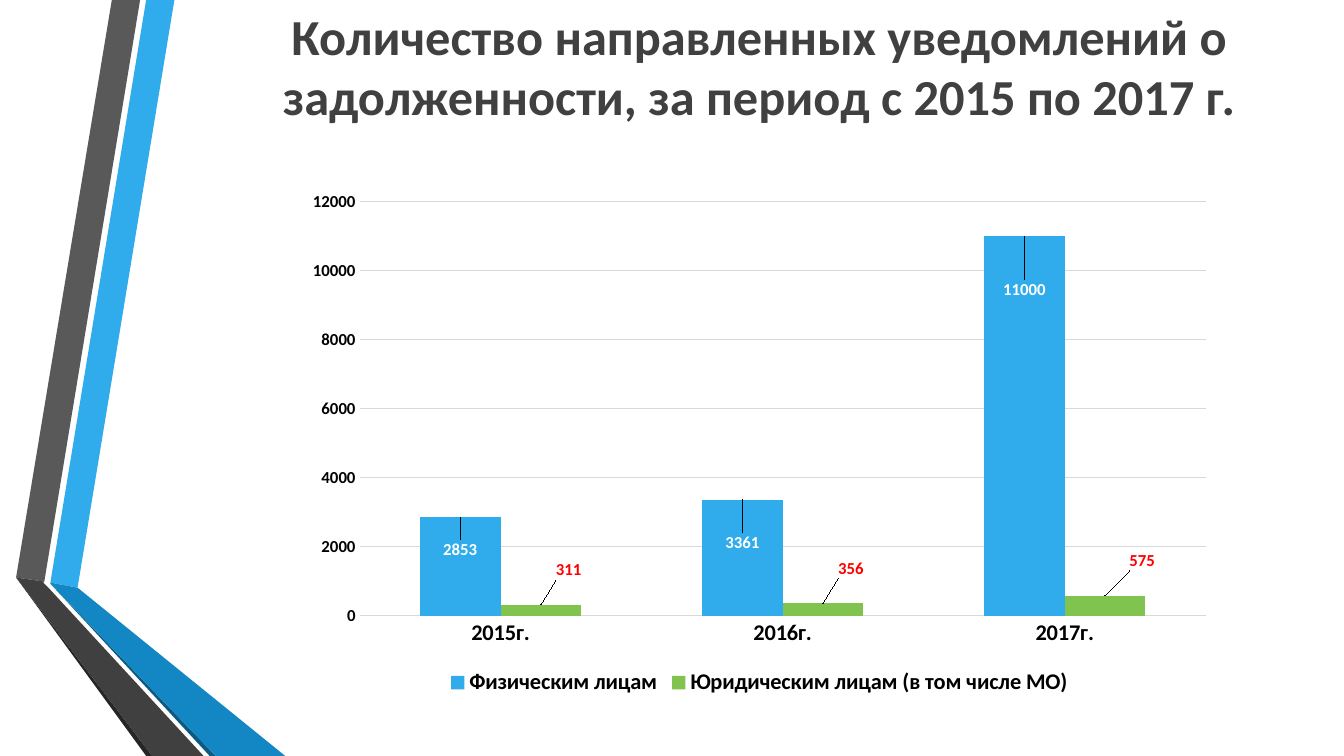
import pptx
import pptx.chart.data
import pptx.dml.color
import pptx.enum.chart
import pptx.enum.text
import pptx.oxml
import pptx.oxml.ns
import pptx.util

COLORS = {
    "blue": "30ACEC", "deep_blue": "1287C3", "navy": "0C5A82",
    "gray": "595959", "dark_gray": "404040", "near_black": "262626",
    "green": "80C34F", "red": "FF0000", "white": "FFFFFF",
    "black": "000000", "grid": "D9D9D9",
}
FONT = "Calibri"


def rgb(name):
    return pptx.dml.color.RGBColor.from_string(COLORS[name])


def style(font, size, color, bold=True):
    font.name = FONT
    font.size = pptx.util.Pt(size)
    font.bold = bold
    font.color.rgb = rgb(color)


deck = pptx.Presentation()
deck.slide_width = pptx.util.Inches(13.33)
deck.slide_height = pptx.util.Inches(7.5)
W, H = deck.slide_width, deck.slide_height
slide = deck.slides.add_slide(deck.slide_layouts[6])

# Folded ribbons on the left, in hundredths of an inch
ribbons = [
    ("blue", [(50, 578), (77, 583), (173, 0), (145, 0)]),
    ("gray", [(139, 0), (111, 0), (16, 573), (44, 577)]),
    ("near_black", [(16, 573), (145, 750), (151, 750)]),
    ("navy", [(50, 579), (208, 750), (214, 750)]),
    ("deep_blue", [(50, 578), (50, 579), (214, 750), (283, 750), (77, 583)]),
    ("dark_gray", [(202, 750), (48, 583), (43, 578), (44, 577), (16, 573), (151, 750)]),
]
for color, corners in ribbons:
    outline = slide.shapes.build_freeform(*corners[0], scale=pptx.util.Inches(0.01))
    outline.add_line_segments(corners[1:], close=True)
    ribbon = outline.convert_to_shape()
    ribbon.shadow.inherit = False
    ribbon.fill.solid()
    ribbon.fill.fore_color.rgb = rgb(color)
    ribbon.line.fill.background()

# Title
heading = slide.shapes.add_textbox(
    int(W * 0.13), 0, int(W * 0.87), pptx.util.Inches(1.3)).text_frame
heading.word_wrap = True
heading.vertical_anchor = pptx.enum.text.MSO_ANCHOR.MIDDLE
heading.text = "Количество направленных уведомлений о задолженности, за период с 2015 по 2017 г."
heading.paragraphs[0].alignment = pptx.enum.text.PP_ALIGN.CENTER
style(heading.paragraphs[0].runs[0].font, 36, "dark_gray")

# Notices by year; label shifts are shares of the chart's width and height
notices = [
    ("Физическим лицам", (2853, 3361, 11000), "blue", "white",
     [(0, 0.09), (0, 0.11), (0, 0.13)]),
    ("Юридическим лицам (в том числе МО)", (311, 356, 575), "green", "red",
     [(0.03, -0.04), (0.03, -0.04), (0.04, -0.04)]),
]
notice_data = pptx.chart.data.CategoryChartData()
notice_data.categories = ["2015г.", "2016г.", "2017г."]
for name, counts, *_ in notices:
    notice_data.add_series(name, counts)
chart = slide.shapes.add_chart(
    pptx.enum.chart.XL_CHART_TYPE.COLUMN_CLUSTERED,
    int(W * 0.219), int(H * 0.24), int(W * 0.692), int(H * 0.687), notice_data).chart
style(chart.font, 10, "black", bold=False)
chart.has_title = False

# Axes and legend
years, amounts = chart.category_axis, chart.value_axis
for axis, size in ((years, 16), (amounts, 12)):
    axis.major_tick_mark = axis.minor_tick_mark = pptx.enum.chart.XL_TICK_MARK.NONE
    axis.format.line.fill.background()
    style(axis.tick_labels.font, size, "black")
amounts.has_major_gridlines = True
amounts.major_gridlines.format.line.color.rgb = rgb("grid")
amounts.major_gridlines.format.line.width = pptx.util.Pt(0.75)
chart.has_legend = True
chart.legend.position = pptx.enum.chart.XL_LEGEND_POSITION.BOTTOM
chart.legend.include_in_layout = False
style(chart.legend.font, 16, "black")

# Columns and their shifted value labels
columns = chart.plots[0]
columns.gap_width = 150
columns.overlap = 0
columns.vary_by_categories = False
for series, (_, _, fill, label_color, shifts) in zip(columns.series, notices):
    series.format.fill.solid()
    series.format.fill.fore_color.rgb = rgb(fill)
    series.invert_if_negative = False
    series.data_labels.show_value = True
    style(series.data_labels.font, 12, label_color)
    for year, (dx, dy) in enumerate(shifts):
        label = series.points[year].data_label
        style(label.font, 12, label_color)
        label.position = pptx.enum.chart.XL_LABEL_POSITION.OUTSIDE_END
        layout = pptx.oxml.parse_xml(
            f'<c:layout {pptx.oxml.ns.nsdecls("c")}><c:manualLayout>'
            f'<c:x val="{dx}"/><c:y val="{dy}"/></c:manualLayout></c:layout>')
        series.data_labels._element.findall(
            pptx.oxml.ns.qn("c:dLbl"))[year].insert(1, layout)

deck.save("out.pptx")
